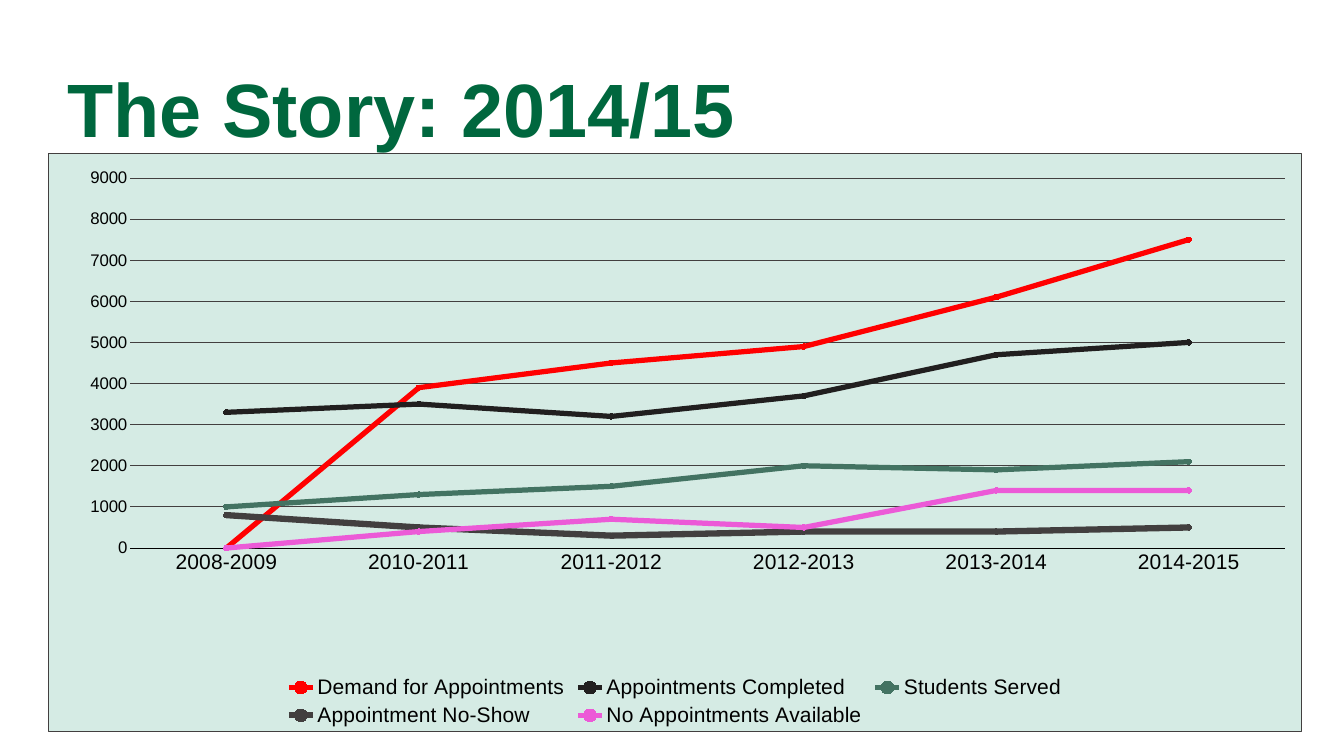
"""Build the 2014/15 appointments story slide with its line chart."""
from dataclasses import dataclass
from typing import Optional

import lxml.etree
import pptx
import pptx.chart.data
import pptx.dml.color
import pptx.enum.chart
import pptx.enum.text
import pptx.oxml
import pptx.oxml.ns
import pptx.util

FONT = "Arial"
SLIDE_WIDTH = pptx.util.Inches(17.78)
SLIDE_HEIGHT = pptx.util.Inches(10)
COLORS = {
    "title": "00673E", "panel": "D5EBE4", "rule": "423F3F", "label": "000000",
    "demand": "FF0000", "completed": "211F1F", "served": "437362",
    "no_show": "423F3F", "unavailable": "EC5AD7",
    "demand_dot": "599A83", "completed_dot": "A6C8BC", "served_dot": "408A70",
    "no_show_dot": "423F3F", "unavailable_dot": "003E25",
}
YEARS = ["2008-2009", "2010-2011", "2011-2012", "2012-2013", "2013-2014", "2014-2015"]


@dataclass(frozen=True)
class Area:
    """A box in percent of its parent's width and height."""
    left: float
    top: float
    width: float
    height: float

    def on_slide(self) -> tuple[int, int, int, int]:
        """Return the box in slide units."""
        return (int(SLIDE_WIDTH * self.left / 100), int(SLIDE_HEIGHT * self.top / 100),
                int(SLIDE_WIDTH * self.width / 100), int(SLIDE_HEIGHT * self.height / 100))


@dataclass(frozen=True)
class Trend:
    """One yearly measure and its line style."""
    name: str
    counts: tuple[Optional[int], ...]
    color: str
    weight: float = 5


TITLE_AREA = Area(5, 7.3, 90, 16)
CHART_AREA = Area(3.6, 20.2, 93.25, 76.6)
PLOT_AREA = Area(6.5, 4.3, 92.2, 64)
TRENDS = [
    Trend("Demand for Appointments", (None, 3900, 4500, 4900, 6100, 7500), "demand"),
    Trend("Appointments Completed", (3300, 3500, 3200, 3700, 4700, 5000), "completed"),
    Trend("Students Served", (1000, 1300, 1500, 2000, 1900, 2100), "served"),
    Trend("Appointment No-Show", (800, 500, 300, 400, 400, 500), "no_show", 6),
    Trend("No Appointments Available", (None, 400, 700, 500, 1400, 1400), "unavailable"),
]


def rgb(name: str) -> pptx.dml.color.RGBColor:
    """Look up a named colour."""
    return pptx.dml.color.RGBColor.from_string(COLORS[name])


def style_font(font, size: float, color: str, bold: bool = False) -> None:
    """Set face, size, colour and weight."""
    font.name, font.size, font.bold = FONT, pptx.util.Pt(size), bold
    font.color.rgb = rgb(color)


def style_line(line, color: str, weight: float) -> None:
    """Give a line a solid colour and a weight in points."""
    line.color.rgb = rgb(color)
    line.width = pptx.util.Pt(weight)


def style_trend(series, trend: Trend) -> None:
    """Apply a trend's line and marker style."""
    series.smooth = False
    style_line(series.format.line, trend.color, trend.weight)
    series.marker.style = pptx.enum.chart.XL_MARKER_STYLE.CIRCLE
    series.marker.size = 5
    dot = series.marker.format
    dot.fill.solid()
    dot.fill.fore_color.rgb = rgb(f"{trend.color}_dot")
    dot.line.fill.background()


def style_axes(chart) -> None:
    """Format the year and count axes and the gridlines."""
    years, counts = chart.category_axis, chart.value_axis
    for axis, size in ((years, 20), (counts, 16)):
        axis.major_tick_mark = axis.minor_tick_mark = pptx.enum.chart.XL_TICK_MARK.NONE
        style_font(axis.tick_labels.font, size, "label")
    style_line(years.format.line, "label", 0.75)
    counts.format.line.fill.background()
    counts.minimum_scale, counts.maximum_scale, counts.major_unit = 0, 9000, 1000
    counts.has_major_gridlines = True
    style_line(counts.major_gridlines.format.line, "rule", 0.75)
    counts.tick_labels.number_format = "General"
    counts.tick_labels.number_format_is_linked = False


def style_panel(chart) -> None:
    """Fill and outline the chart, place its plot and draw blanks as zero."""
    qn, nsdecls = pptx.oxml.ns.qn, pptx.oxml.ns.nsdecls
    body = chart.element.find(qn("c:chart"))
    body.addnext(pptx.oxml.parse_xml(
        f'<c:spPr {nsdecls("c", "a")}>'
        f'<a:solidFill><a:srgbClr val="{COLORS["panel"]}"/></a:solidFill>'
        f'<a:ln w="{pptx.util.Pt(0.75)}"><a:solidFill>'
        f'<a:srgbClr val="{COLORS["rule"]}"/></a:solidFill></a:ln></c:spPr>'))
    plot = body.find(qn("c:plotArea"))
    for old_layout in plot.findall(qn("c:layout")):
        plot.remove(old_layout)
    layout = lxml.etree.Element(qn("c:layout"))
    manual = lxml.etree.SubElement(layout, qn("c:manualLayout"))
    settings = {
        "layoutTarget": "inner", "xMode": "edge", "yMode": "edge",
        "x": PLOT_AREA.left / 100, "y": PLOT_AREA.top / 100,
        "w": PLOT_AREA.width / 100, "h": PLOT_AREA.height / 100,
    }
    for tag, value in settings.items():
        lxml.etree.SubElement(manual, qn(f"c:{tag}")).set("val", str(value))
    plot.insert(0, layout)
    body.find(qn("c:dispBlanksAs")).set("val", "zero")


def add_trend_chart(slide) -> None:
    """Draw the appointment trends."""
    history = pptx.chart.data.CategoryChartData()
    history.categories = YEARS
    for trend in TRENDS:
        history.add_series(trend.name, trend.counts)
    chart = slide.shapes.add_chart(
        pptx.enum.chart.XL_CHART_TYPE.LINE_MARKERS, *CHART_AREA.on_slide(), history).chart
    style_font(chart.font, 10, "rule")
    chart.has_title = False
    chart.plots[0].vary_by_categories = False
    chart.has_legend = True
    chart.legend.position = pptx.enum.chart.XL_LEGEND_POSITION.BOTTOM
    chart.legend.include_in_layout = False
    style_font(chart.legend.font, 20, "label")
    for series, trend in zip(chart.plots[0].series, TRENDS):
        style_trend(series, trend)
    style_axes(chart)
    style_panel(chart)


def add_title(slide, wording: str) -> None:
    """Write the slide title."""
    frame = slide.shapes.add_textbox(*TITLE_AREA.on_slide()).text_frame
    frame.word_wrap = True
    frame.vertical_anchor = pptx.enum.text.MSO_ANCHOR.MIDDLE
    frame.margin_left = frame.margin_right = frame.margin_top = frame.margin_bottom = 0
    heading = frame.paragraphs[0]
    heading.line_spacing = 0.8
    run = heading.add_run()
    run.text = wording
    style_font(run.font, 72, "title", bold=True)


def main() -> None:
    """Build and save the slide."""
    deck = pptx.Presentation()
    deck.slide_width, deck.slide_height = SLIDE_WIDTH, SLIDE_HEIGHT
    slide = deck.slides.add_slide(deck.slide_layouts[6])
    add_trend_chart(slide)
    add_title(slide, "The Story: 2014/15")
    deck.save("out.pptx")


if __name__ == "__main__":
    main()
